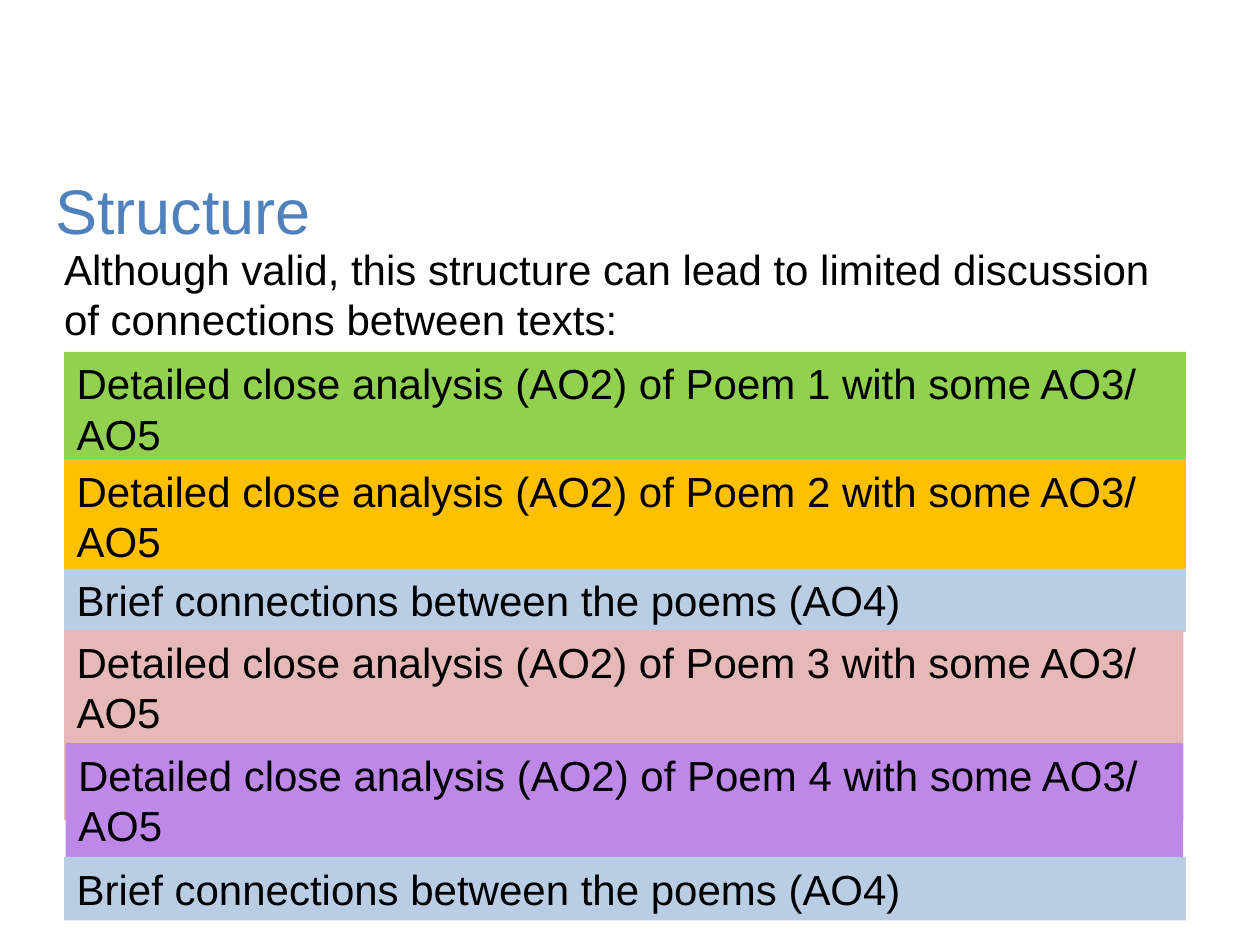
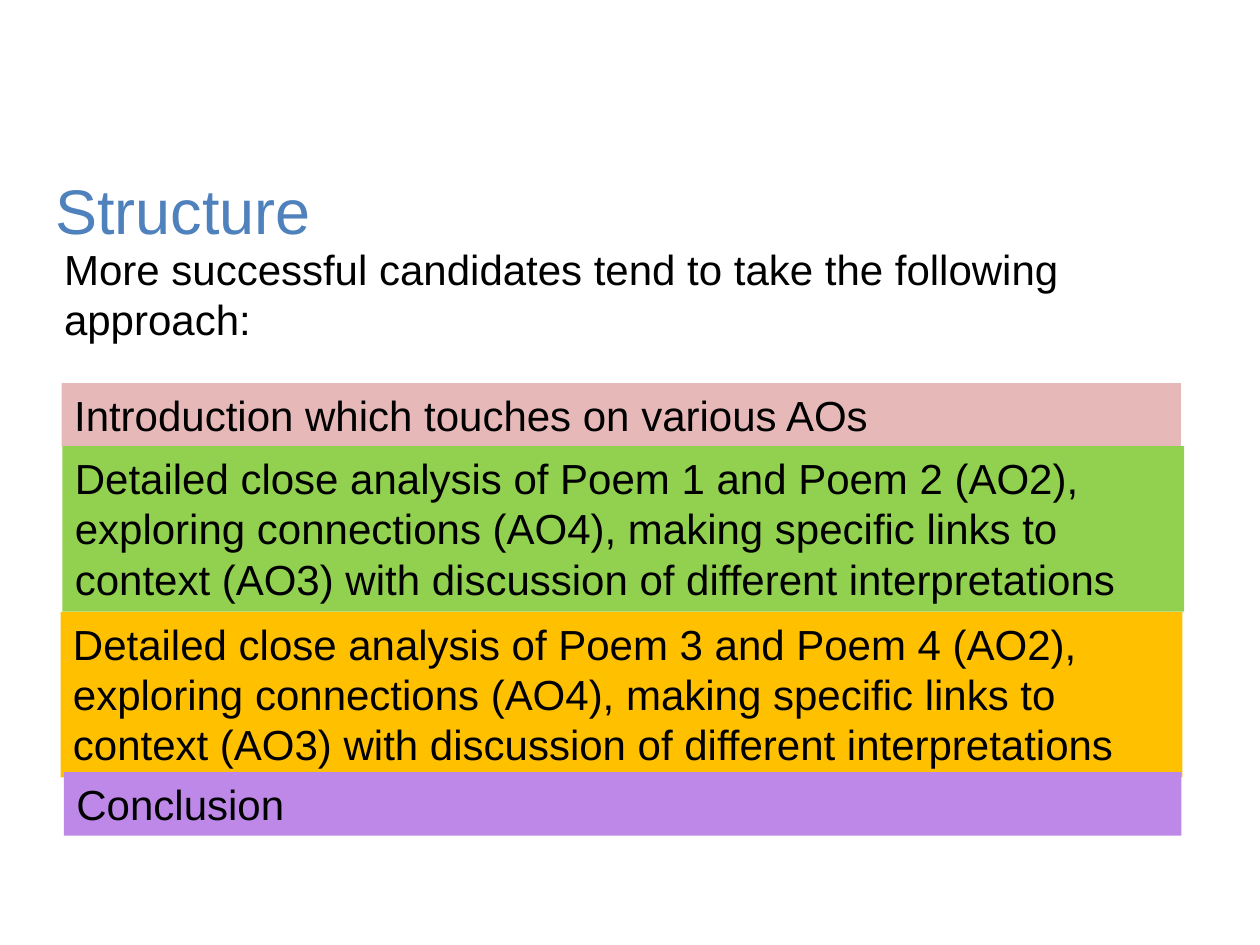
from pptx import Presentation
from pptx.dml.color import RGBColor
from pptx.enum.shapes import MSO_SHAPE as Shape
from pptx.enum.text import MSO_ANCHOR as Anchor, PP_ALIGN as Align
from pptx.util import Pt

COLOURS = {
    "title": "4F81BD",
    "text": "000000",
    "green": "92D050",
    "amber": "FFC000",
    "blue": "B9CDE5",
    "pink": "E6B9B8",
    "purple": "BD88E8",
}
TITLE_ONLY = 5
FRAME_FORMAT = {
    "word_wrap": True,
    "vertical_anchor": Anchor.TOP,
    "margin_left": Pt(7.2),
    "margin_right": Pt(7.2),
    "margin_top": Pt(3.6),
    "margin_bottom": Pt(3.6),
}
TITLE_FONT = {"name": "Arial", "size": Pt(36), "bold": False}
BODY_FONT = {"name": "Arial", "size": Pt(24), "bold": False}

ONE_LINE, TWO_LINES, THREE_LINES, TALL = 36.3, 65.4, 94.5, 108.7


def set_all(target, values):
    for name, value in values.items():
        setattr(target, name, value)


def rgb(colour):
    return RGBColor.from_string(COLOURS[colour])


class EssayDeck:
    def __init__(self):
        self.deck = Presentation()
        self.deck.slide_width, self.deck.slide_height = Pt(720), Pt(540)
        self.slide = None

    def put_text(self, shape, text, font, colour="text", space_after=0):
        set_all(shape.text_frame, FRAME_FORMAT)
        paragraph = shape.text_frame.paragraphs[0]
        paragraph.text = text
        set_all(paragraph, {"alignment": Align.LEFT, "space_before": Pt(0),
                            "space_after": Pt(space_after)})
        set_all(paragraph.font, font)
        paragraph.font.color.rgb = rgb(colour)

    def start_slide(self, heading):
        self.slide = self.deck.slides.add_slide(self.deck.slide_layouts[TITLE_ONLY])
        title = self.slide.shapes.title
        set_all(title, {"left": Pt(24.5), "top": Pt(94.3),
                        "width": Pt(652.3), "height": Pt(51)})
        self.put_text(title, heading, TITLE_FONT, "title")

    def lead_in(self, text):
        box = self.slide.shapes.add_textbox(Pt(29.5), Pt(135.4), Pt(648.7), Pt(65.4))
        self.put_text(box, text, BODY_FONT, space_after=2)

    def band(self, text, colour, left, top, width, height):
        """Add one coloured stage of the essay plan."""
        stage = self.slide.shapes.add_shape(
            Shape.RECTANGLE, Pt(left), Pt(top), Pt(width), Pt(height))
        stage.shadow.inherit = False
        stage.fill.solid()
        stage.fill.fore_color.rgb = rgb(colour)
        stage.line.fill.background()
        self.put_text(stage, text, BODY_FONT)


def poem_analysis(poem):
    return f"Detailed close analysis (AO2) of Poem {poem} with some AO3/ AO5"


def paired_analysis(first, second):
    return (f"Detailed close analysis of Poem {first} and Poem {second} (AO2), "
            "exploring connections (AO4), making specific links to context (AO3) "
            "with discussion of different interpretations")


CONNECTIONS = "Brief connections between the poems (AO4)"

PLANS = [
    ("Although valid, this structure can lead to limited discussion "
     "of connections between texts:",
     [(poem_analysis(1), "green", 36.7, 201, 641, TALL),
      (poem_analysis(2), "amber", 36.7, 262.3, 641, TWO_LINES),
      (CONNECTIONS, "blue", 36.7, 324.9, 641, ONE_LINE),
      (poem_analysis(3), "pink", 36.7, 360, 639.5, TALL),
      (poem_analysis(4), "purple", 37.6, 424.6, 638.6, TWO_LINES),
      (CONNECTIONS, "blue", 36.7, 489.7, 641, ONE_LINE)]),
    ("More successful candidates tend to take the following approach:",
     [("Introduction which touches on various AOs",
       "pink", 35.3, 218.9, 639.5, ONE_LINE),
      (paired_analysis(1, 2), "green", 35.7, 255, 641, THREE_LINES),
      (paired_analysis(3, 4), "amber", 34.6, 349.7, 641, THREE_LINES),
      ("Conclusion", "purple", 36.6, 441.2, 638.6, ONE_LINE)]),
]


def main():
    essay = EssayDeck()
    for introduction, stages in PLANS:
        essay.start_slide("Structure")
        essay.lead_in(introduction)
        for stage in stages:
            essay.band(*stage)
    essay.deck.save("out.pptx")


if __name__ == "__main__":
    main()
